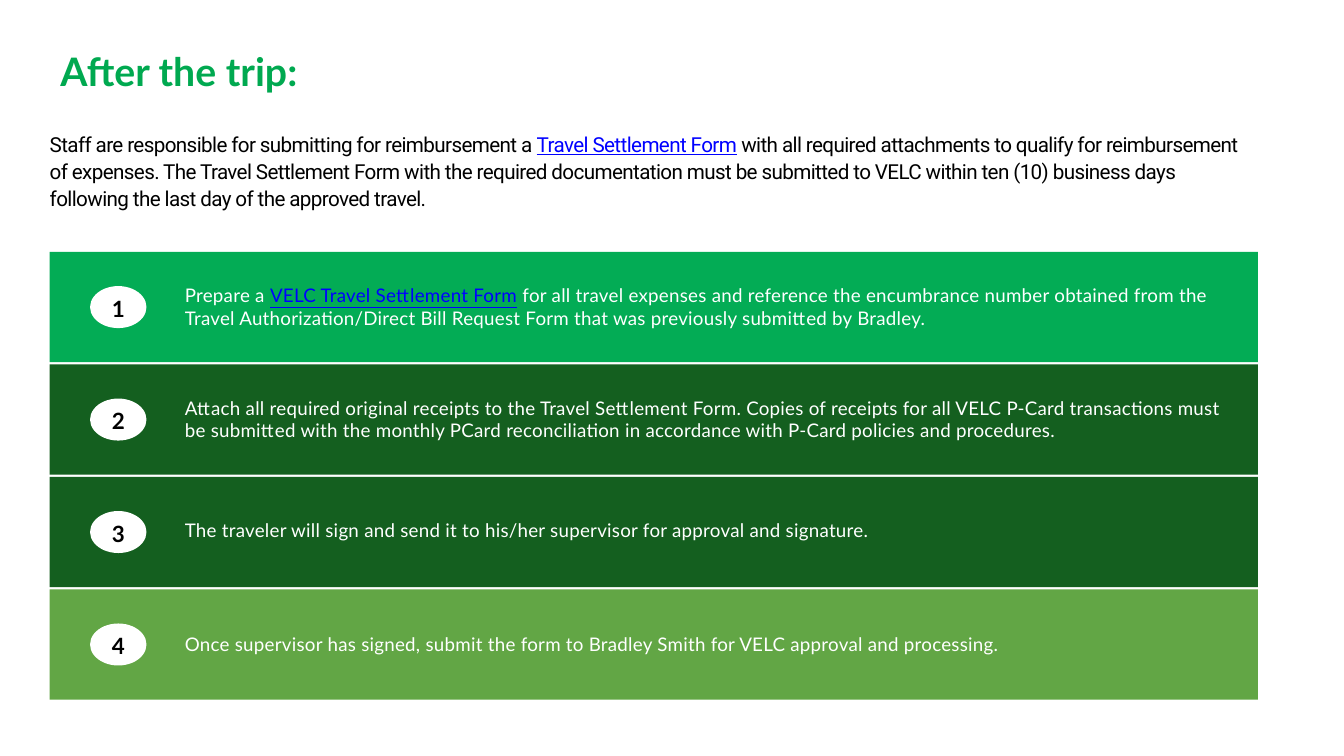
from pptx import Presentation
from pptx.dml.color import RGBColor
from pptx.enum.shapes import MSO_SHAPE as SHAPE
from pptx.enum.text import MSO_ANCHOR as ANCHOR, PP_ALIGN as ALIGN
from pptx.util import Pt

BLACK = RGBColor(0x00, 0x00, 0x00)
WHITE = RGBColor(0xFF, 0xFF, 0xFF)
LINK = RGBColor(0x00, 0x00, 0xFF)
TITLE = RGBColor(0x00, 0xA9, 0x50)
BRIGHT = RGBColor(0x03, 0xAC, 0x55)
DARK = RGBColor(0x14, 0x5F, 0x1F)
LIGHT = RGBColor(0x62, 0xA6, 0x45)

LEFT, BAND_W, BAND_H = 53.3, 1294.5, 118.1
BAND_TOP, BAND_STEP = 270, 120.5
OVAL_W, OVAL_H = 60.5, 45

INTRO = [
    ("Staff are responsible for submitting for reimbursement a ", False),
    ("Travel Settlement Form", True),
    (" with all required attachments to qualify for reimbursement of expenses. "
     "The Travel Settlement Form with the required documentation must be submitted "
     "to VELC within ten (10) business days following the last day of the approved travel.", False),
]

STEPS = [
    (BRIGHT, 34.4, [
        ("Prepare a ", False),
        ("VELC Travel Settlement Form", True),
        (" for all travel expenses and reference the encumbrance number obtained from the "
         "Travel Authorization/Direct Bill Request Form that was previously submitted by Bradley.", False),
    ]),
    (DARK, 34.4, [
        ("Attach all required original receipts to the Travel Settlement Form. Copies of receipts "
         "for all VELC P-Card transactions must be submitted with the monthly PCard reconciliation "
         "in accordance with P-Card policies and procedures.", False),
    ]),
    (DARK, 44.6, [
        ("The traveler will sign and send it to his/her supervisor for approval and signature.", False),
    ]),
    (LIGHT, 46.8, [
        ("Once supervisor has signed, submit the form to Bradley Smith for VELC approval and processing.", False),
    ]),
]


def add_block(s, kind, x, y, w, h, color):
    """Add a plain filled shape without outline or shadow."""
    sp = s.shapes.add_shape(kind, Pt(x), Pt(y), Pt(w), Pt(h))
    sp.shadow.inherit = False
    sp.fill.solid()
    sp.fill.fore_color.rgb = color
    sp.line.fill.background()


def add_text(s, x, y, w, h, runs, font, size, color, leading,
             spacing=0, bold=False, align=ALIGN.LEFT, anchor=ANCHOR.TOP):
    """Add a one-paragraph text box from (text, is_link) runs."""
    tf = s.shapes.add_textbox(Pt(x), Pt(y), Pt(w), Pt(h)).text_frame
    tf.word_wrap = True
    tf.margin_left = tf.margin_right = tf.margin_top = tf.margin_bottom = 0
    tf.vertical_anchor = anchor
    p = tf.paragraphs[0]
    p.alignment = align
    p.line_spacing = Pt(leading)
    for text, is_link in runs:
        r = p.add_run()
        r.text = text
        r.font.name = font
        r.font.size = Pt(size)
        r.font.bold = bold
        r.font.underline = is_link
        r.font.color.rgb = LINK if is_link else color
        if spacing:
            r.font._element.set("spc", str(round(spacing * 100)))


def add_step(s, number, color, text_dy, runs):
    """Add a coloured band with its numbered oval and instruction."""
    top = BAND_TOP + (number - 1) * BAND_STEP
    add_block(s, SHAPE.RECTANGLE, LEFT, top, BAND_W, BAND_H, color)
    add_block(s, SHAPE.OVAL, 96.5, top + (BAND_H - OVAL_H) / 2, OVAL_W, OVAL_H, WHITE)
    add_text(s, 102.2, top + 38.3, 49, 38.9, [(str(number), False)], "Lato", 24, BLACK, 33.6,
             bold=True, align=ALIGN.CENTER, anchor=ANCHOR.MIDDLE)
    add_text(s, 198, top + text_dy, 1126.8, BAND_H - 2 * text_dy, runs,
             "Lato", 20.1, WHITE, 24.1, spacing=0.3)


def main():
    """Build the slide and save it."""
    prs = Presentation()
    prs.slide_width, prs.slide_height = Pt(1440), Pt(810)
    s = prs.slides.add_slide(prs.slide_layouts[6])
    add_text(s, 64.8, 51.1, 1006.6, 50.4, [("After the trip:", False)],
             "Lato", 42, TITLE, 50.4, bold=True)
    add_text(s, LEFT, 139.2, 1290, 85, INTRO, "Roboto", 22.1, BLACK, 28.8, spacing=-0.64)
    for number, (color, text_dy, runs) in enumerate(STEPS, start=1):
        add_step(s, number, color, text_dy, runs)
    prs.save("out.pptx")


if __name__ == "__main__":
    main()
